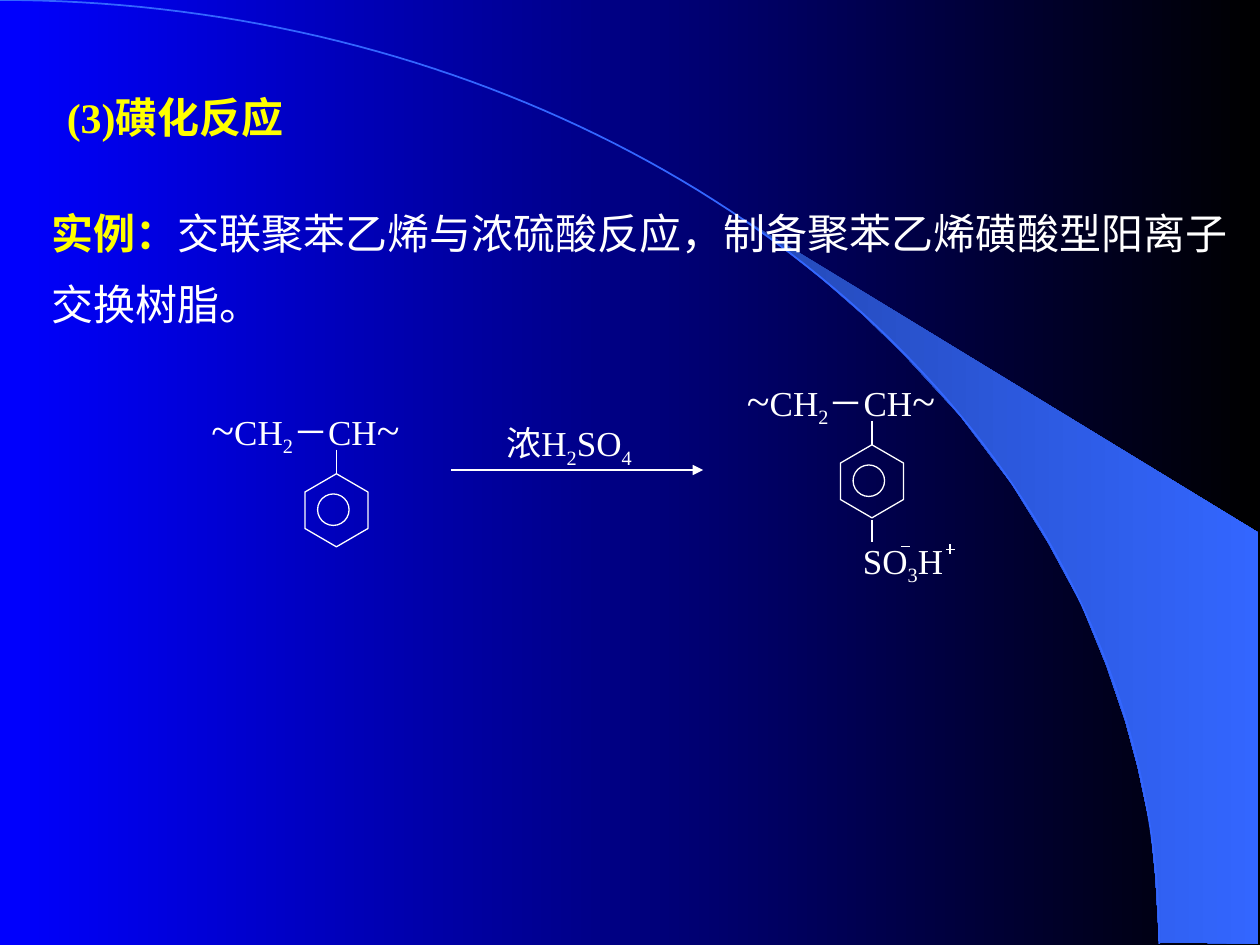
from dataclasses import dataclass
from math import cos, pi, sin

from lxml import etree
from pptx import Presentation
from pptx.dml.color import RGBColor
from pptx.enum.shapes import MSO_CONNECTOR, MSO_SHAPE
from pptx.enum.text import MSO_ANCHOR, MSO_AUTO_SIZE, PP_ALIGN
from pptx.oxml.ns import qn
from pptx.util import Inches, Pt

LINE = MSO_CONNECTOR.STRAIGHT
HEXAGON, OVAL = MSO_SHAPE.HEXAGON, MSO_SHAPE.OVAL
TOP, LEFT, FIXED = MSO_ANCHOR.TOP, PP_ALIGN.LEFT, MSO_AUTO_SIZE.NONE


@dataclass(frozen=True)
class Theme:
    font: str = "Times New Roman"
    white: str = "FFFFFF"
    yellow: str = "FFFF00"
    blue: str = "0000FF"
    black: str = "000000"
    sky: str = "3366FF"
    dusk: str = "2449B6"
    large: int = 24
    small: int = 20
    thin: float = 0.75


THEME = Theme()

# Inner edge of the wedge, from the tip down to the slide's foot
EDGE = [(5.89, 1.73), (6.24, 1.99), (6.53, 2.22), (6.85, 2.5), (7.16, 2.8),
        (7.62, 3.3), (8.03, 3.84), (8.32, 4.31), (8.58, 4.79), (8.78, 5.28),
        (8.93, 5.72), (9.03, 6.09), (9.13, 6.56), (9.17, 6.96), (9.2, 7.48)]


def rgb(code):
    return RGBColor.from_string(code)


def blend(fill, first, last):
    fill.gradient()
    fill.gradient_angle = 0
    for stop, code, place in zip(fill.gradient_stops, (first, last), (0, 1)):
        stop.color.rgb = rgb(code)
        stop.position = place


def write(para, text, size=THEME.small, color=THEME.white, bold=False, base=0):
    run = para.add_run()
    run.text = text
    font = run.font
    font.name, font.size, font.bold = THEME.font, Pt(size), bold
    font.color.rgb = rgb(color)
    if base:
        run._r.get_or_add_rPr().set("baseline", str(base * 1000))


def place(shape, x, y, w, h):
    """Set a text shape's box and return its first paragraph."""
    shape.left, shape.top = Inches(x), Inches(y)
    shape.width, shape.height = Inches(w), Inches(h)
    frame = shape.text_frame
    frame.word_wrap, frame.auto_size = True, FIXED
    frame.vertical_anchor = TOP
    para = frame.paragraphs[0]
    para.alignment = LEFT
    return para


def label(slide, x, y, w, h, *parts):
    """Add a formula; an integer part is a subscript."""
    box = slide.shapes.add_textbox(0, 0, 0, 0)
    para = place(box, x, y, w, h)
    for part in parts:
        if isinstance(part, int):
            write(para, str(part), base=-25)
        else:
            write(para, part, size=THEME.large if part == "~" else THEME.small)


def line(slide, x1, y1, x2, y2, head=False):
    link = slide.shapes.add_connector(
        LINE, Inches(x1), Inches(y1), Inches(x2), Inches(y2))
    link.line.color.rgb = rgb(THEME.white)
    link.line.width = Pt(THEME.thin)
    if head:
        etree.SubElement(link.line._get_or_add_ln(), qn("a:tailEnd"),
                         type="triangle")
    etree.SubElement(link._element.spPr, qn("a:effectLst"))


def hollow(slide, kind, x, y, w, h):
    shape = slide.shapes.add_shape(
        kind, Inches(x), Inches(y), Inches(w), Inches(h))
    shape.shadow.inherit = False
    shape.rotation = 90
    shape.fill.background()
    shape.line.color.rgb = rgb(THEME.white)
    shape.line.width = Pt(THEME.thin)
    return shape


def outline(slide, points, close):
    spots = [(Inches(x), Inches(y)) for x, y in points]
    build = slide.shapes.build_freeform(*spots[0])
    build.add_line_segments(spots[1:], close=close)
    shape = build.convert_to_shape()
    shape.shadow.inherit = False
    return shape


def backdrop(slide):
    blend(slide.background.fill, THEME.blue, THEME.black)
    wedge = outline(slide, EDGE + [(9.99, 7.49), (9.99, 4.23)], True)
    blend(wedge.fill, THEME.dusk, THEME.sky)
    wedge.line.fill.background()

    # Quarter ellipse from the top left corner
    wide, high, steps = 9.2, 7.49, 90
    turns = [pi / 2 * i / steps for i in range(steps + 1)]
    arc = outline(slide, [(wide * sin(t), high * (1 - cos(t))) for t in turns],
                  False)
    arc.fill.background()
    arc.line.color.rgb = rgb(THEME.sky)
    arc.line.width = Pt(1)


def heading(slide):
    title, body = slide.placeholders
    for item in (title, body):  # bring the text in front of the backdrop
        slide.shapes._spTree.append(item._element)
    write(place(title, 0.43, 0.68, 3.07, 0.5), "(3)磺化反应",
          size=THEME.large, color=THEME.yellow, bold=True)

    para = place(body, 0.31, 1.44, 9.69, 1.22)
    para.line_spacing, para.space_before = 1.4, Pt(0)
    props = para._p.get_or_add_pPr()
    props.set("marL", "0")
    props.set("indent", "0")
    etree.SubElement(props, qn("a:buNone"))
    write(para, "实例：", size=THEME.large, color=THEME.yellow, bold=True)
    write(para, "交联聚苯乙烯与浓硫酸反应，制备聚苯乙烯磺酸型阳离子交换树脂。",
          size=THEME.large)


def styrene(slide, x, y):
    """Draw a chain unit with its benzene ring."""
    label(slide, x, y, 2.33, 0.5, "~", "CH", 2, "－CH", "~")
    line(slide, x + 1.09, y + 0.42, x + 1.09, y + 0.61)
    ring = hollow(slide, HEXAGON, x + 0.8, y + 0.65, 0.58, 0.5)
    ring.adjustments[0] = 0.29
    hollow(slide, OVAL, x + 0.94, y + 0.77, 0.25, 0.25)


def main():
    deck = Presentation()
    deck.slide_width, deck.slide_height = Inches(10), Inches(7.5)
    slide = deck.slides.add_slide(deck.slide_layouts[1])
    backdrop(slide)
    heading(slide)

    # Reactant and reaction arrow
    styrene(slide, 1.58, 3.15)
    line(slide, 3.58, 3.73, 5.58, 3.73, head=True)
    label(slide, 3.92, 3.3, 1.33, 0.43, "浓H", 2, "SO", 4)

    # Product with its sulfonic group
    styrene(slide, 5.83, 2.92)
    line(slide, 6.92, 4.13, 6.92, 4.3)
    label(slide, 6.75, 4.23, 1.33, 0.43, "SO", 3, "H")

    # Charge signs: plus, then minus
    line(slide, 7.54, 4.32, 7.54, 4.4)
    line(slide, 7.58, 4.36, 7.51, 4.36)
    line(slide, 7.22, 4.34, 7.15, 4.34)
    deck.save("out.pptx")


if __name__ == "__main__":
    main()
